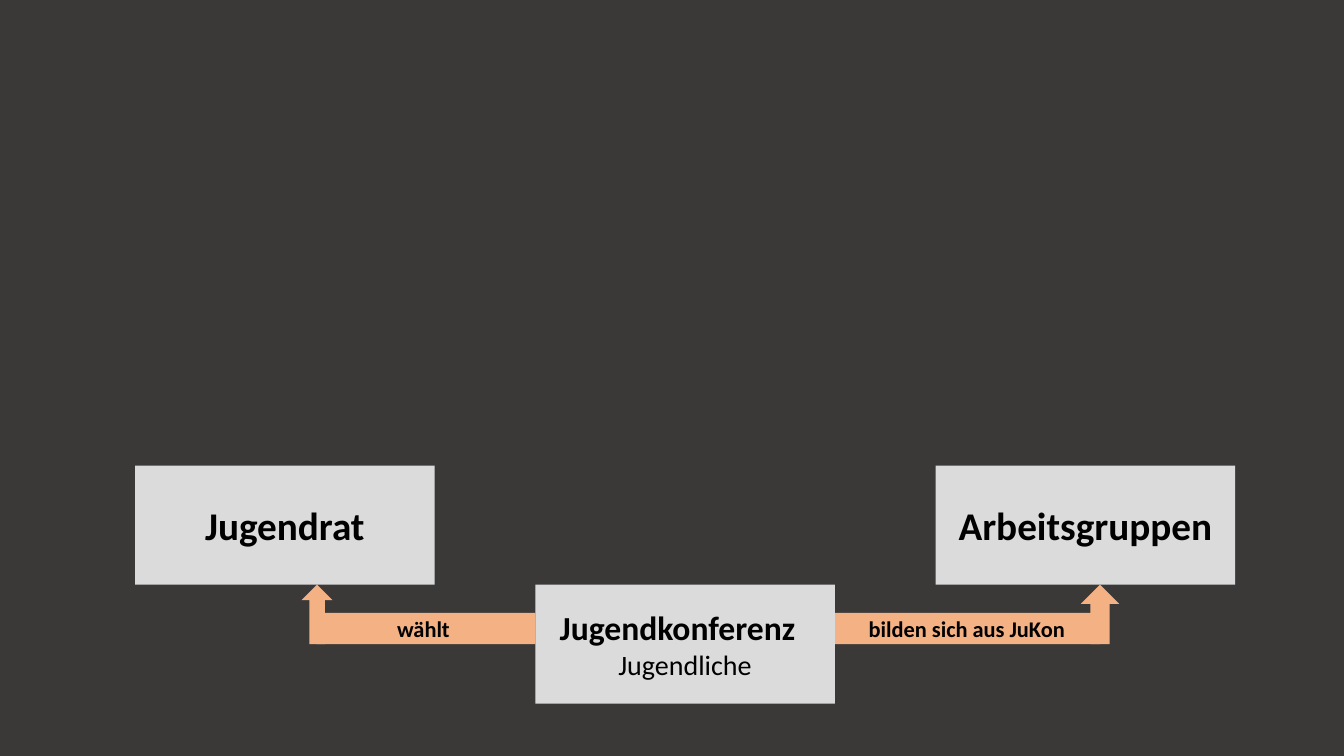
from pptx import Presentation
from pptx.dml.color import RGBColor
from pptx.enum.shapes import MSO_SHAPE
from pptx.enum.text import MSO_ANCHOR, PP_ALIGN
from pptx.util import Inches, Pt

RECT, ARROW = MSO_SHAPE.RECTANGLE, MSO_SHAPE.UP_ARROW
MIDDLE, CENTER = MSO_ANCHOR.MIDDLE, PP_ALIGN.CENTER
DARK = RGBColor(0x3B, 0x38, 0x38)
ORANGE = RGBColor(0xF4, 0xB1, 0x83)
GREY = RGBColor(0xDB, 0xDB, 0xDB)
BLACK = RGBColor(0, 0, 0)

BOX_W, BOX_H = 2.97, 1.18
BOX_TOP, BAND_TOP = 4.62, 6.08
BAND_H, ARROW_H = 0.31, 0.59
LOW_TOP = BOX_TOP + BOX_H

# text, size, bold
BANDS = [
    (3.14, 2.17, [("wählt ", 16, True)]),
    (8.27, 2.64, [("bilden sich aus JuKon", 16, True)]),
]
ARROWS = [(2.99, 0.31), (10.72, 0.38)]
BOXES = [
    (5.31, LOW_TOP, [("Jugendkonferenz  ", 24, True), ("Jugendliche", 20, False)]),
    (1.34, BOX_TOP, [("Jugendrat", 28, True)]),
    (9.28, BOX_TOP, [("Arbeitsgruppen", 28, True)]),
]


def draw(slide, kind, place, fill, lines=()):
    """Add a flat shape with centred lines of text."""
    shape = slide.shapes.add_shape(kind, *map(Inches, place))
    shape.shadow.inherit = False
    shape.fill.solid()
    shape.fill.fore_color.rgb = fill
    shape.line.fill.background()
    frame = shape.text_frame
    frame.word_wrap = True
    frame.vertical_anchor = MIDDLE
    for i, (text, size, bold) in enumerate(lines):
        para = frame.add_paragraph() if i else frame.paragraphs[0]
        para.text = text
        para.alignment = CENTER
        font = para.font
        font.name, font.size, font.bold = "Calibri", Pt(size), bold
        font.color.rgb = BLACK


def main():
    """Build the chart of youth bodies."""
    deck = Presentation()
    deck.slide_width, deck.slide_height = Inches(13.33), Inches(7.5)
    slide = deck.slides.add_slide(deck.slide_layouts[6])
    back = slide.background.fill
    back.solid()
    back.fore_color.rgb = DARK
    for left, width, lines in BANDS:
        draw(slide, RECT, (left, BAND_TOP, width, BAND_H), ORANGE, lines)
    for left, width in ARROWS:
        draw(slide, ARROW, (left, LOW_TOP, width, ARROW_H), ORANGE)
    for left, top, lines in BOXES:
        draw(slide, RECT, (left, top, BOX_W, BOX_H), GREY, lines)
    deck.save("out.pptx")


if __name__ == "__main__":
    main()
